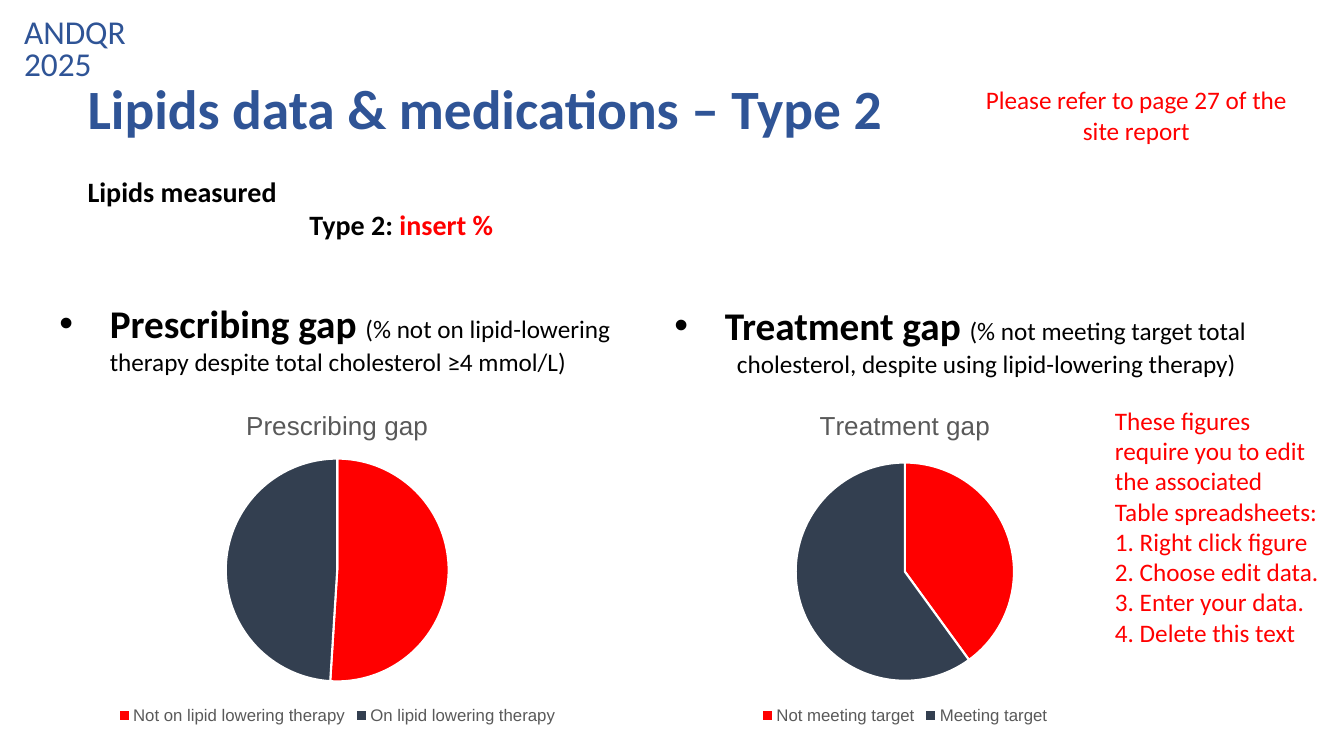
"""Build the lipids data and medications slide for type 2 diabetes."""
import lxml.etree
import pptx
import pptx.chart.data
import pptx.dml.color
import pptx.enum.chart
import pptx.enum.text
import pptx.oxml.ns
import pptx.util

Inches = pptx.util.Inches
Pt = pptx.util.Pt
RGBColor = pptx.dml.color.RGBColor
ANCHOR = pptx.enum.text.MSO_ANCHOR
qn = pptx.oxml.ns.qn

BLUE = RGBColor(0x2F, 0x54, 0x96)
RED = RGBColor(0xFF, 0x00, 0x00)
BLACK = RGBColor(0x00, 0x00, 0x00)
WHITE = RGBColor(0xFF, 0xFF, 0xFF)
SLATE = RGBColor(0x33, 0x3F, 0x50)
GREY = RGBColor(0x59, 0x59, 0x59)


def style_font(font, size, color, bold=False, name="Calibri"):
    """Set the look of a font."""
    font.name = name
    font.size = Pt(size)
    font.bold = bold
    font.color.rgb = color


def add_text(page, place, lines, size, color, bold=False, anchor=ANCHOR.TOP):
    """Add a wrapped text box with one uniform paragraph per line."""
    box = page.shapes.add_textbox(*map(Inches, place))
    frame = box.text_frame
    frame.word_wrap = True
    frame.vertical_anchor = anchor
    frame.text = "\n".join(lines)
    for para in frame.paragraphs:
        style_font(para.font, size, color, bold)
    return frame


def add_span(para, text, size, color, bold):
    """Add a run with its own font."""
    span = para.add_run()
    span.text = text
    style_font(span.font, size, color, bold)


def indent(para, left, first=0):
    """Set the left margin and first-line indent of a paragraph."""
    properties = para._p.get_or_add_pPr()
    properties.set("marL", str(Inches(left)))
    properties.set("indent", str(Inches(first)))
    return properties


def add_gap_heading(page, place, heading, detail):
    """Add a bulleted heading followed by its smaller explanation."""
    frame = add_text(page, place, [""], 18, BLACK)
    para = frame.paragraphs[0]
    properties = indent(para, 0.5, -0.5)
    bullet_font = lxml.etree.Element(qn("a:buFont"), typeface="Arial")
    bullet = lxml.etree.Element(qn("a:buChar"), char="•")
    properties.insert(0, bullet_font)
    properties.insert(1, bullet)
    add_span(para, heading + " ", 28, BLACK, True)
    add_span(para, detail, 18, BLACK, False)
    return frame


def set_plot_area(chart, area):
    """Fix the inner plot area as fractions of the chart."""
    plot_area = chart.element.find(".//" + qn("c:plotArea"))
    for old in plot_area.findall(qn("c:layout")):
        plot_area.remove(old)
    layout = lxml.etree.Element(qn("c:layout"))
    manual = lxml.etree.SubElement(layout, qn("c:manualLayout"))
    settings = [("layoutTarget", "inner"), ("xMode", "edge"), ("yMode", "edge")]
    settings += zip("xywh", map(str, area))
    for tag, value in settings:
        lxml.etree.SubElement(manual, qn("c:" + tag), val=value)
    plot_area.insert(0, layout)


def add_gap_pie(page, place, title, shares, area):
    """Add a two-part pie chart with a title and a legend."""
    data = pptx.chart.data.CategoryChartData()
    data.categories = list(shares)
    data.add_series(title, list(shares.values()))
    kind = pptx.enum.chart.XL_CHART_TYPE.PIE
    chart = page.shapes.add_chart(kind, *map(Inches, place), data).chart
    style_font(chart.font, 10, BLACK, name="Arial")
    chart.has_title = True
    heading = chart.chart_title.text_frame
    heading.text = title
    style_font(heading.paragraphs[0].font, 18.6, GREY, name="Arial")
    chart.has_legend = True
    chart.legend.position = pptx.enum.chart.XL_LEGEND_POSITION.BOTTOM
    chart.legend.include_in_layout = False
    style_font(chart.legend.font, 12, GREY, name="Arial")
    chart.plots[0].vary_by_categories = True
    for index, color in enumerate((RED, SLATE)):
        look = chart.plots[0].series[0].points[index].format
        look.fill.solid()
        look.fill.fore_color.rgb = color
        look.line.color.rgb = WHITE
        look.line.width = Pt(1.5)
    set_plot_area(chart, area)


def main():
    """Build and save the slide."""
    deck = pptx.Presentation()
    deck.slide_width = Inches(13.33)
    deck.slide_height = Inches(7.5)
    page = deck.slides.add_slide(deck.slide_layouts[6])

    title = add_text(page, (0.77, 0.4, 12.42, 0.82),
                     ["Lipids data & medications – Type 2"], 39.6, BLUE, True)
    title.margin_top = Inches(0.41)
    title.paragraphs[0].line_spacing = 0.9

    add_gap_pie(page, (0.57, 3.88, 5.55, 3.35), "Prescribing gap",
                {"Not on lipid lowering therapy": 51, "On lipid lowering therapy": 49},
                (0.3, 0.2, 0.4, 0.66))
    label = add_text(page, (0.14, 0.27, 1.85, 0.47), ["ANDQR 2025"],
                     23.8, BLUE, anchor=ANCHOR.MIDDLE)
    label.paragraphs[0].line_spacing = 0.8

    treatment = add_gap_heading(page, (6.59, 2.94, 6.32, 0.88), "Treatment gap",
                                "(% not meeting target total")
    para = treatment.add_paragraph()
    indent(para, 0.62)
    para.text = "cholesterol, despite using lipid-lowering therapy)"
    style_font(para.font, 18, BLACK)
    add_gap_heading(page, (0.49, 2.92, 6.32, 0.88), "Prescribing gap",
                    "(% not on lipid-lowering therapy despite total cholesterol ≥4 mmol/L)")
    add_gap_pie(page, (6.81, 3.88, 4.33, 3.35), "Treatment gap",
                {"Not meeting target": 40, "Meeting target": 60},
                (0.25, 0.21, 0.5, 0.65))

    measured = add_text(page, (0.77, 1.68, 10.37, 0.77), ["Lipids measured"],
                        20, BLACK, True)
    para = measured.add_paragraph()
    indent(para, 2.2)
    add_span(para, "Type 2: ", 20, BLACK, True)
    add_span(para, "insert %", 20, RED, True)

    add_text(page, (10.96, 3.97, 2.24, 2.52),
             ["These figures require you to edit the associated Table spreadsheets:",
              "1. Right click figure", "2. Choose edit data.",
              "3. Enter your data.", "4. Delete this text"], 18, RED)
    note = add_text(page, (9.63, 0.74, 3.28, 0.81),
                    ["Please refer to page 27 of the site report"], 18, RED)
    note.margin_top = note.margin_bottom = Inches(0.1)
    note.paragraphs[0].alignment = pptx.enum.text.PP_ALIGN.CENTER

    deck.save("out.pptx")


if __name__ == "__main__":
    main()
